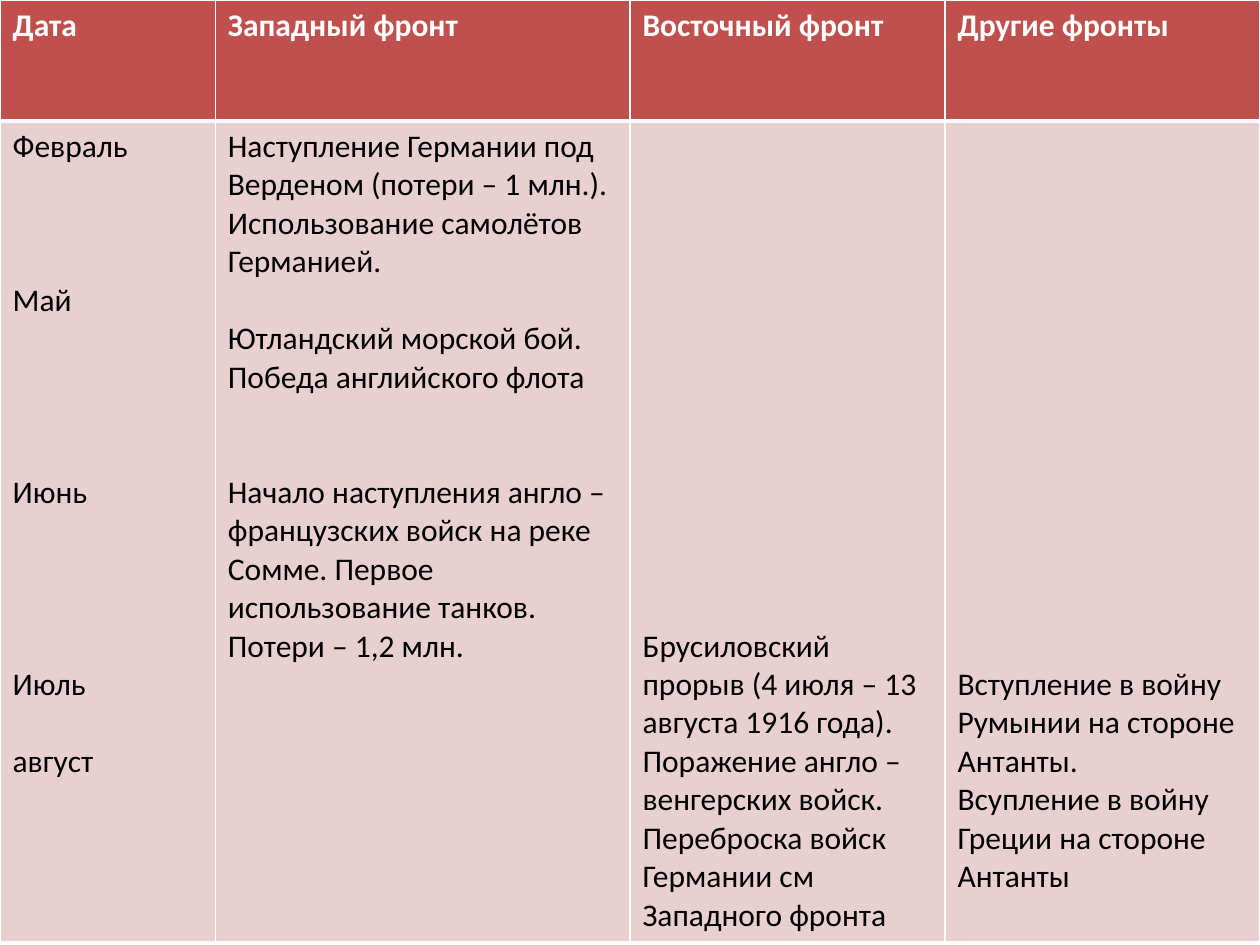
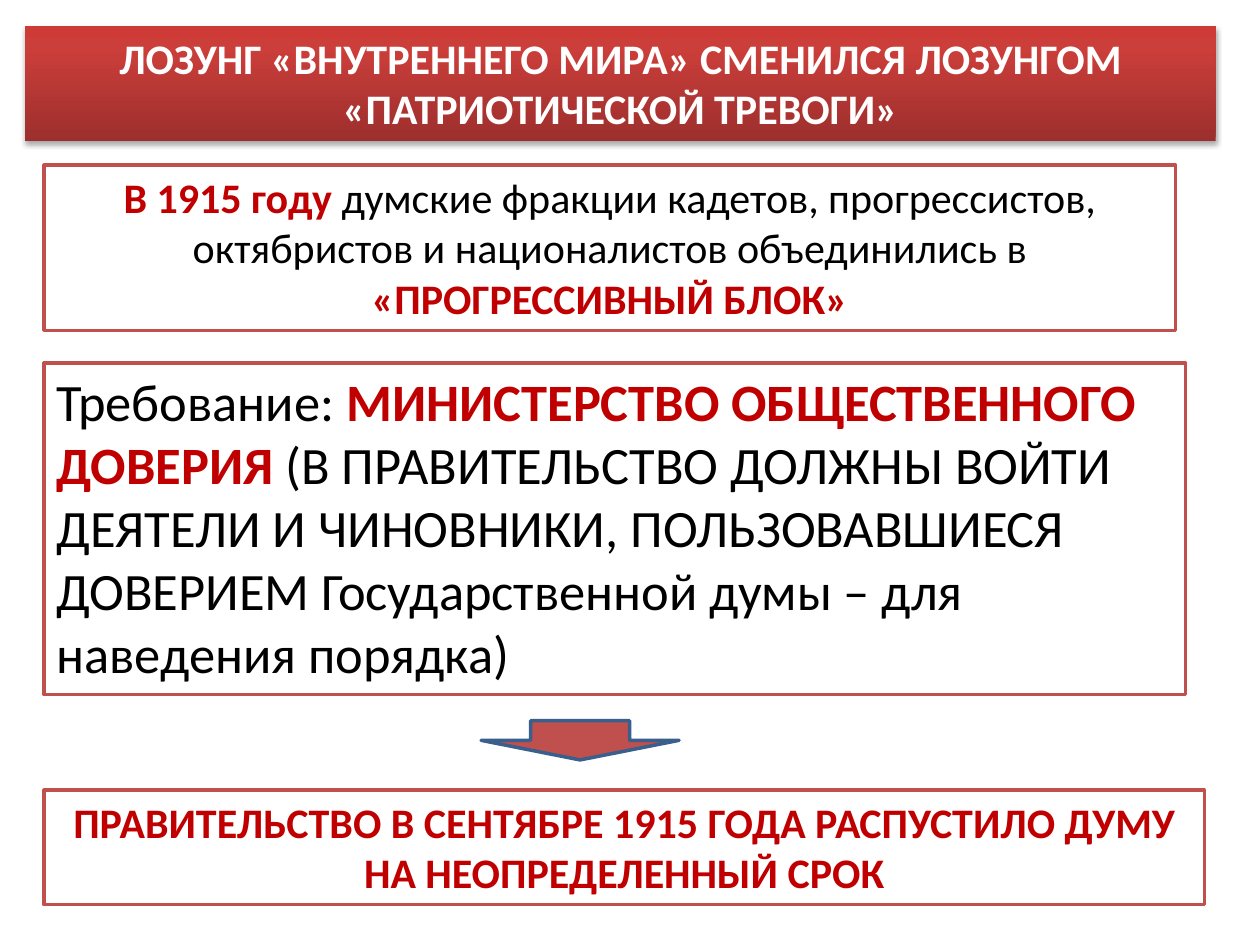
from dataclasses import dataclass
from typing import NamedTuple

from lxml import etree
from pptx import Presentation
from pptx import util as u
from pptx.dml.color import RGBColor
from pptx.enum import shapes, text
from pptx.oxml import parse_xml
from pptx.oxml.ns import nsdecls, qn

Cm, Pt = u.Cm, u.Pt


@dataclass(frozen=True)
class Theme:
    font: str = "Calibri"
    accent: str = "C0504D"
    emphasis: str = "C00000"
    pale: str = "E8D0D0"
    white: str = "FFFFFF"
    black: str = "000000"
    arrow_line: str = "3A5F8C"
    banner: tuple = ((0, "9C2F2D"), (80, "CB3E3A"), (100, "CE3B37"))
    table_size: int = 18
    body_size: int = 24
    demand_size: int = 30
    outline: int = 2
    rule: int = 1
    header_rule: int = 3
    line_spacing: float = 1.22


THEME = Theme()
LINE_HEIGHT = THEME.table_size * THEME.line_spacing
CELL_TOP = Cm(0.13)


class Entry(NamedTuple):
    """Text of a table cell, set a number of empty lines below what precedes it."""
    words: str
    lines_before: int = 0


class Phrase(NamedTuple):
    words: str
    color: str = THEME.black
    bold: bool = False


class Box(NamedTuple):
    left: float
    top: float
    width: float
    height: float

    def lengths(self) -> list:
        return [Cm(value) for value in self]


class Statement(NamedTuple):
    box: Box
    phrases: list
    size: int = THEME.body_size
    centred: bool = True
    banner: bool = False


class Front(NamedTuple):
    heading: str
    width: float
    entries: list


FRONTS = [
    Front("Дата", 4.34, [
        Entry("Февраль"), Entry("Май", 3), Entry("Июнь", 4),
        Entry("Июль", 4), Entry("август", 1)]),
    Front("Западный фронт", 8.36, [
        Entry("Наступление Германии под Верденом (потери – 1 млн.). "
              "Использование самолётов Германией."),
        Entry("Ютландский морской бой. Победа английского флота", 1),
        Entry("Начало наступления англо – французских войск на реке Сомме. "
              "Первое использование танков. Потери – 1,2 млн.", 2)]),
    Front("Восточный фронт", 6.35, [
        Entry("Брусиловский прорыв (4 июля – 13 августа 1916 года). "
              "Поражение англо – венгерских войск. "
              "Переброска войск Германии см Западного фронта", 13)]),
    Front("Другие фронты", 6.35, [
        Entry("Вступление в войну Румынии на стороне Антанты.", 14),
        Entry("Всупление в войну Греции на стороне Антанты")]),
]
ROW_HEIGHTS = (2.44, 16.54)


def strong(words: str) -> Phrase:
    return Phrase(words, THEME.emphasis, True)


STATEMENTS = [
    Statement(Box(0.51, 0.53, 24, 2.31), [
        Phrase("ЛОЗУНГ «ВНУТРЕННЕГО МИРА» СМЕНИЛСЯ ЛОЗУНГОМ "
               "«ПАТРИОТИЧЕСКОЙ ТРЕВОГИ»", THEME.white, True)], banner=True),
    Statement(Box(0.89, 3.33, 22.81, 3.33), [
        strong("В 1915 году "),
        Phrase("думские фракции кадетов, прогрессистов, октябристов "
               "и националистов объединились в "),
        strong("«ПРОГРЕССИВНЫЙ БЛОК»")]),
    Statement(Box(0.89, 7.32, 23.01, 6.68), [
        Phrase("Требование: "),
        strong("МИНИСТЕРСТВО ОБЩЕСТВЕННОГО ДОВЕРИЯ "),
        Phrase("(В ПРАВИТЕЛЬСТВО ДОЛЖНЫ ВОЙТИ ДЕЯТЕЛИ И ЧИНОВНИКИ, "
               "ПОЛЬЗОВАВШИЕСЯ ДОВЕРИЕМ Государственной думы – "
               "для наведения порядка)")],
        size=THEME.demand_size, centred=False),
    Statement(Box(0.89, 15.93, 23.39, 2.31), [
        strong("ПРАВИТЕЛЬСТВО В СЕНТЯБРЕ 1915 ГОДА РАСПУСТИЛО ДУМУ "
               "НА НЕОПРЕДЕЛЕННЫЙ СРОК")]),
]
ARROW = Box(9.7, 14.53, 3.99, 0.79)


def rgb(color: str) -> RGBColor:
    return RGBColor.from_string(color)


def paint(shape, fill: str, line: str) -> None:
    shape.fill.solid()
    shape.fill.fore_color.rgb = rgb(fill)
    shape.line.color.rgb = rgb(line)
    shape.line.width = Pt(THEME.outline)


def paint_banner(shape) -> None:
    """Give the shape the vertical gradient and the soft shadow below it."""
    shape.line.fill.background()
    shape.fill.gradient()
    shape.fill.gradient_angle = 90
    properties = shape._element.spPr
    stops = properties.find(qn("a:gradFill")).find(qn("a:gsLst"))
    for stop in list(stops):
        stops.remove(stop)
    for percent, color in THEME.banner:
        stop = etree.SubElement(stops, qn("a:gs"), pos=str(percent * 1000))
        etree.SubElement(stop, qn("a:srgbClr"), val=color)
    properties.find(qn("a:effectLst")).append(parse_xml(
        f'<a:outerShdw {nsdecls("a")} blurRad="{Pt(3.1)}" dist="{Pt(1.8)}" '
        f'dir="5400000" rotWithShape="0"><a:srgbClr val="{THEME.black}">'
        '<a:alpha val="35000"/></a:srgbClr></a:outerShdw>'))


def add_preset(slide, preset, box: Box):
    shape = slide.shapes.add_shape(preset, *box.lengths())
    shape.shadow.inherit = False
    return shape


def add_statement(slide, statement: Statement) -> None:
    shape = add_preset(slide, shapes.MSO_SHAPE.RECTANGLE, statement.box)
    if statement.banner:
        paint_banner(shape)
    else:
        paint(shape, THEME.white, THEME.accent)
    frame = shape.text_frame
    frame.word_wrap = True
    frame.vertical_anchor = text.MSO_ANCHOR.TOP
    paragraph = frame.paragraphs[0]
    paragraph.alignment = (text.PP_ALIGN.CENTER if statement.centred
                           else text.PP_ALIGN.LEFT)
    paragraph.font.name = THEME.font
    paragraph.font.size = Pt(statement.size)
    for phrase in statement.phrases:
        run = paragraph.add_run()
        run.text = phrase.words
        run.font.bold = phrase.bold
        run.font.color.rgb = rgb(phrase.color)


def set_borders(cell, top: int, bottom: int) -> None:
    widths = {"L": THEME.rule, "R": THEME.rule, "T": top, "B": bottom}
    properties = cell._tc.get_or_add_tcPr()
    for position, (side, width) in enumerate(widths.items()):
        properties.insert(position, parse_xml(
            f'<a:ln{side} {nsdecls("a")} w="{Pt(width)}"><a:solidFill>'
            f'<a:srgbClr val="{THEME.white}"/></a:solidFill></a:ln{side}>'))


def fill_cell(cell, entries: list, fill: str, color: str, bold: bool) -> None:
    cell.fill.solid()
    cell.fill.fore_color.rgb = rgb(fill)
    cell.margin_top = CELL_TOP + Pt(entries[0].lines_before * LINE_HEIGHT)
    frame = cell.text_frame
    for index, entry in enumerate(entries):
        paragraph = frame.add_paragraph() if index else frame.paragraphs[0]
        paragraph.text = entry.words
        if index:
            paragraph.space_before = Pt(entry.lines_before * LINE_HEIGHT)
        font = paragraph.font
        font.name, font.size, font.bold = THEME.font, Pt(THEME.table_size), bold
        font.color.rgb = rgb(color)


def build_fronts_slide(slide) -> None:
    table = slide.shapes.add_table(
        len(ROW_HEIGHTS), len(FRONTS), Cm(0), Cm(0),
        Cm(sum(front.width for front in FRONTS)), Cm(sum(ROW_HEIGHTS))).table
    for row, height in zip(table.rows, ROW_HEIGHTS):
        row.height = Cm(height)
    for column, front in enumerate(FRONTS):
        table.columns[column].width = Cm(front.width)
        heading, events = table.cell(0, column), table.cell(1, column)
        fill_cell(heading, [Entry(front.heading)], THEME.accent, THEME.white, True)
        set_borders(heading, THEME.rule, THEME.header_rule)
        fill_cell(events, front.entries, THEME.pale, THEME.black, False)
        set_borders(events, THEME.header_rule, THEME.rule)


def build_duma_slide(slide) -> None:
    for statement in STATEMENTS:
        add_statement(slide, statement)
    arrow = add_preset(slide, shapes.MSO_SHAPE.DOWN_ARROW, ARROW)
    paint(arrow, THEME.accent, THEME.arrow_line)


def main() -> None:
    deck = Presentation()
    deck.slide_width, deck.slide_height = Cm(25.4), Cm(19.05)
    blank = deck.slide_layouts[6]
    for build in (build_fronts_slide, build_duma_slide):
        build(deck.slides.add_slide(blank))
    deck.save("out.pptx")


if __name__ == "__main__":
    main()
